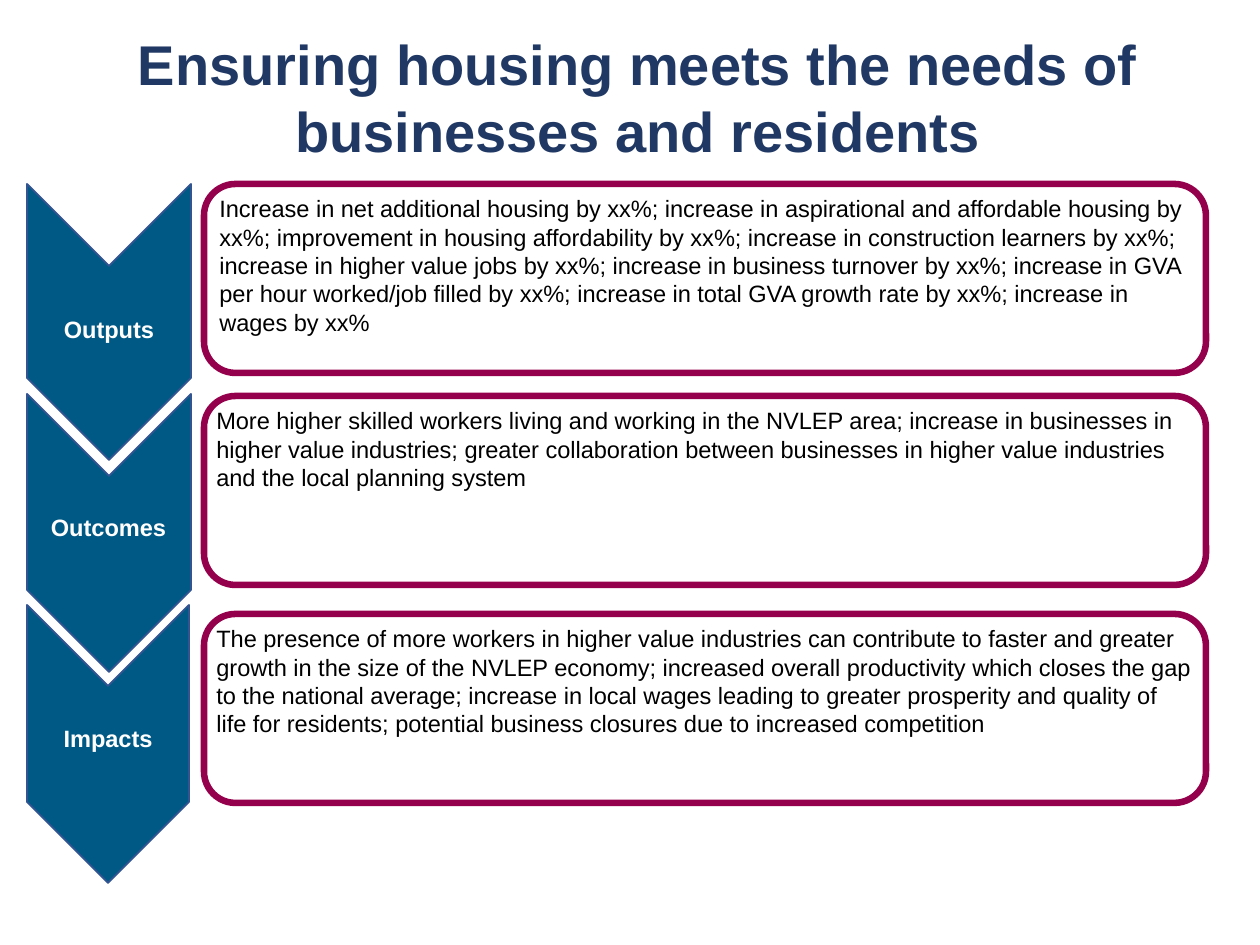
from pptx import Presentation
from pptx import util as u
from pptx.dml.color import RGBColor
from pptx.enum import shapes, text

PX = u.Inches(1) // 126
NAVY = RGBColor(0x20, 0x38, 0x64)
TEAL = RGBColor(0x00, 0x59, 0x84)
BLUE = RGBColor(0x32, 0x54, 0x91)
PLUM = RGBColor(0x94, 0x00, 0x4B)
WHITE = RGBColor(0xFF, 0xFF, 0xFF)
BLACK = RGBColor(0x00, 0x00, 0x00)

BODY = {"size": u.Pt(13.5), "name": "Arial", "bold": False}
LABEL = {**BODY, "bold": True}
HEAD = {**LABEL, "size": u.Pt(32)}

# Panels: top, left and height of the text, wording
PANELS = [
    (184, 207, 188,
     "Increase in net additional housing by xx%; increase in aspirational and "
     "affordable housing by xx%; improvement in housing affordability by xx%; "
     "increase in construction learners by xx%; increase in higher value jobs "
     "by xx%; increase in business turnover by xx%; increase in GVA per hour "
     "worked/job filled by xx%; increase in total GVA growth rate by xx%; "
     "increase in wages by xx%"),
    (396, 204, 118,
     "More higher skilled workers living and working in the NVLEP area; "
     "increase in businesses in higher value industries; greater collaboration "
     "between businesses in higher value industries and the local planning "
     "system"),
    (614, 204, 188,
     "The presence of more workers in higher value industries can contribute "
     "to faster and greater growth in the size of the NVLEP economy; increased "
     "overall productivity which closes the gap to the national average; "
     "increase in local wages leading to greater prosperity and quality of "
     "life for residents; potential business closures due to increased "
     "competition"),
]

# Chevrons: centre x and y, length, breadth
STEPS = [(109, 322, 276, 164), (109, 533, 278, 164), (108, 744, 278, 162)]

# Labels: left, top, width, wording
LABELS = [(44, 309, 130, "Outputs"), (35, 507, 147, "Outcomes"),
          (43, 718, 130, "Impacts")]


def scale(*box):
    return [n * PX for n in box]


def add_shape(slide, kind, box, fill, line, width):
    shape = slide.shapes.add_shape(kind, *scale(*box))
    shape.shadow.inherit = False
    shape.fill.solid()
    shape.fill.fore_color.rgb = fill
    shape.line.color.rgb = line
    shape.line.width = u.Pt(width)
    return shape


def add_text(slide, box, words, style, color, align=text.PP_ALIGN.CENTER):
    frame = slide.shapes.add_textbox(*scale(*box)).text_frame
    frame.word_wrap = True
    para = frame.paragraphs[0]
    para.alignment = align
    run = para.add_run()
    run.text = words
    for key, value in style.items():
        setattr(run.font, key, value)
    run.font.color.rgb = color


def add_panel(slide, top, left, high, words):
    add_shape(slide, shapes.MSO_SHAPE.ROUNDED_RECTANGLE,
              (204, top, 1002, 189), WHITE, PLUM, 3.75)
    add_text(slide, (left, top + 4, 1002, high), words, BODY, BLACK,
             text.PP_ALIGN.LEFT)


def add_step(slide, mid_x, mid_y, long, wide):
    box = (mid_x - long // 2, mid_y - wide // 2, long, wide)
    step = add_shape(slide, shapes.MSO_SHAPE.CHEVRON, box, TEAL, BLUE, 1)
    step.rotation = 90


def main():
    deck = Presentation()
    deck.slide_width, deck.slide_height = scale(1260, 945)
    slide = deck.slides.add_slide(deck.slide_layouts[6])

    # Outlined panels
    for panel in PANELS:
        add_panel(slide, *panel)

    # Column of chevrons and their labels
    for step in STEPS:
        add_step(slide, *step)
    for left, top, wide, words in LABELS:
        add_text(slide, (left, top, wide, 42), words, LABEL, WHITE)

    # Title
    add_text(slide, (69, 23, 1138, 149),
             "Ensuring housing meets the needs of businesses and residents",
             HEAD, NAVY)

    deck.save("out.pptx")


if __name__ == "__main__":
    main()
